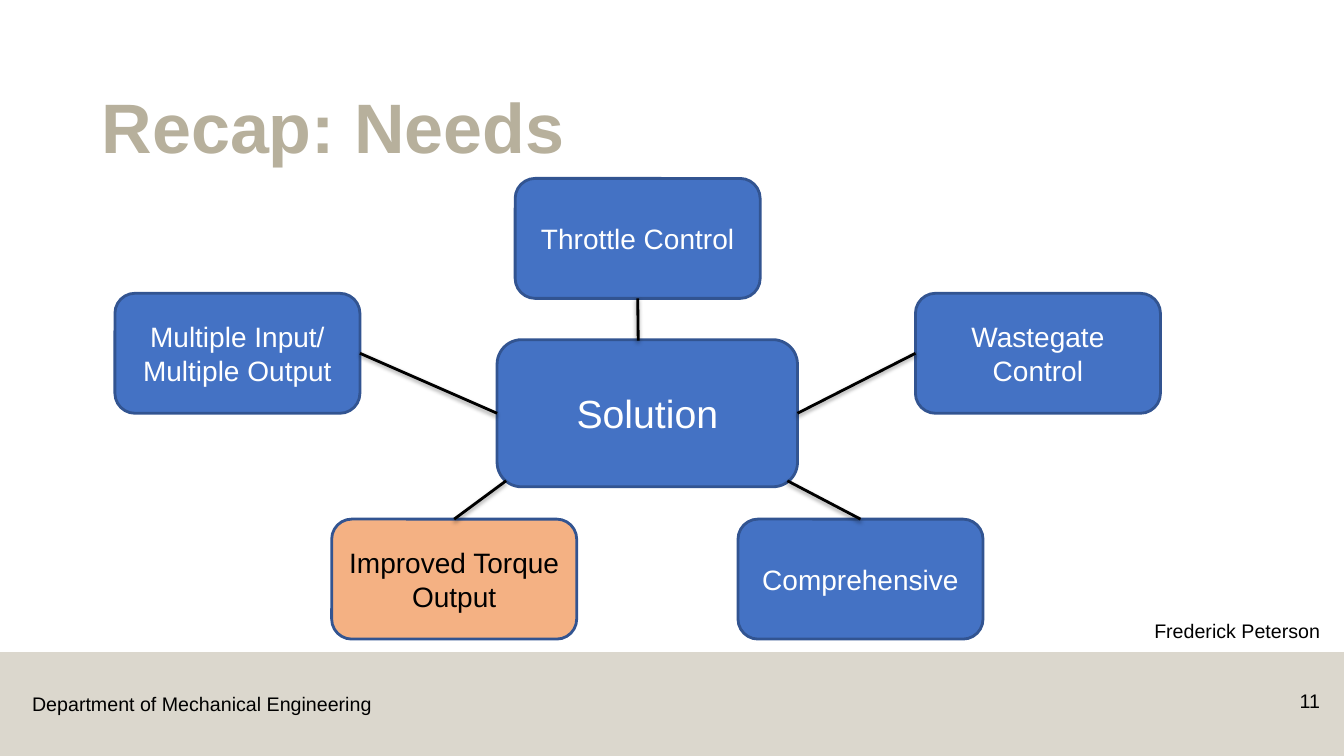
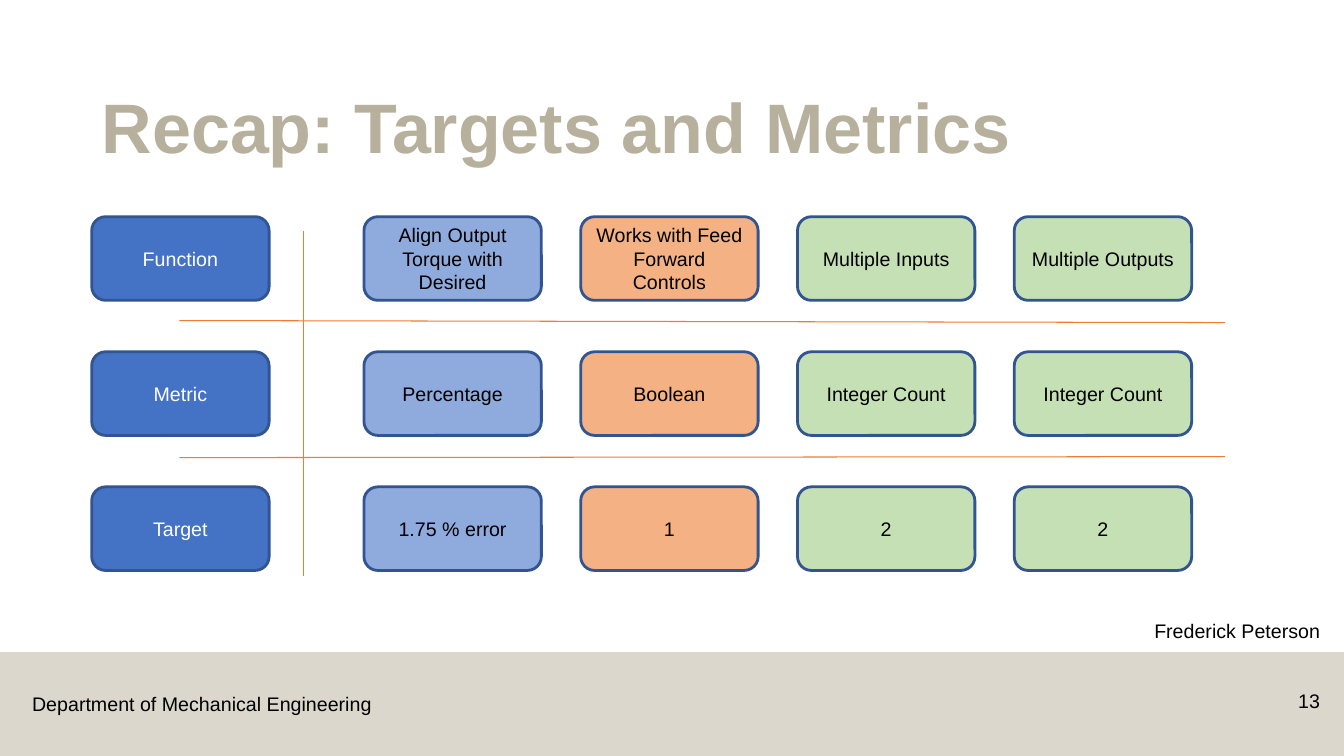
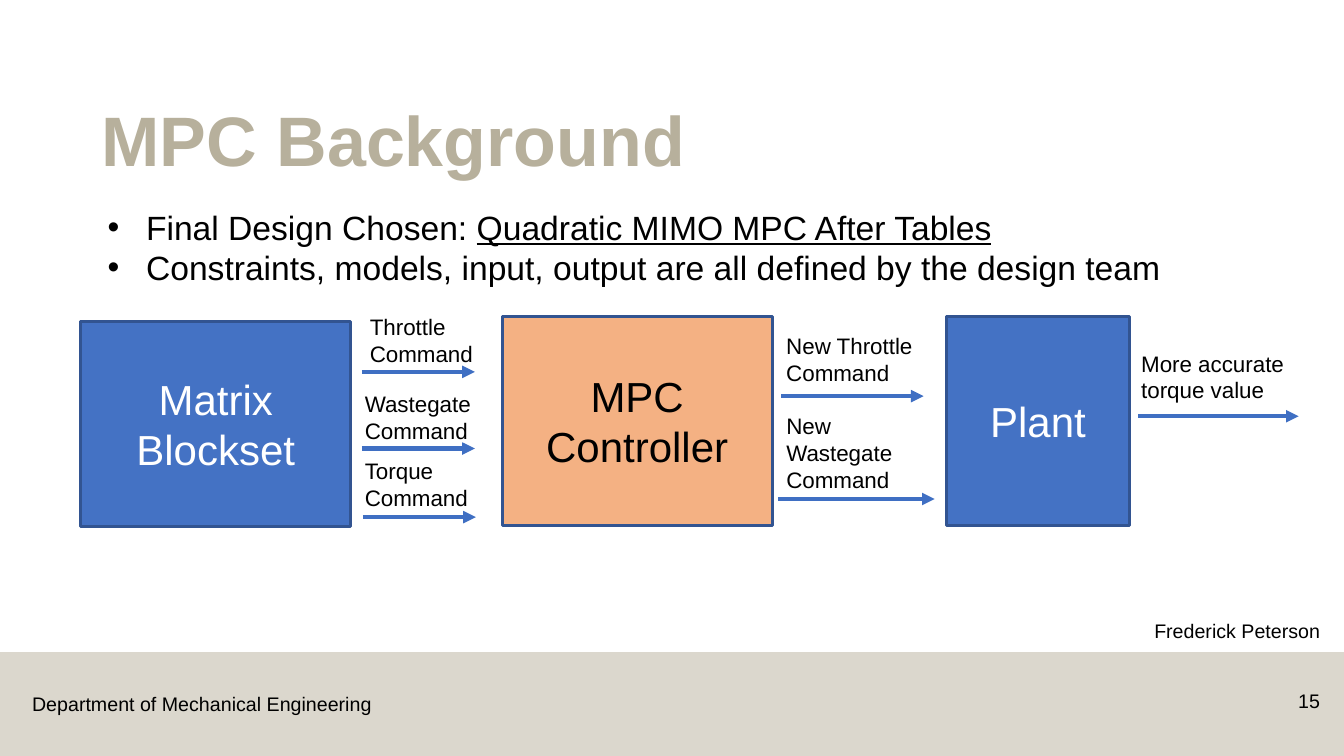
from lxml.etree import SubElement
from pptx import Presentation
from pptx.dml.color import RGBColor
from pptx.enum.shapes import MSO_CONNECTOR, MSO_SHAPE
from pptx.enum.text import MSO_ANCHOR, PP_ALIGN
from pptx.oxml.ns import qn
from pptx.util import Inches, Pt

FONT = "Arial"
BLACK, WHITE = "000000", "FFFFFF"
TAN, BAND = "B7B09C", "DBD7CD"
BLUE, EDGE, ARROW = "4472C4", "325491", "3F6FC3"
SKY, PEACH, GREEN = "8FAADC", "F4B183", "C5E0B4"
ORANGE = "ED7D31"
TOP, LEFT, BOTTOM, RIGHT = range(4)


def rgb(color):
    return RGBColor.from_string(color)


def style(frame, size, color, bold=False, align=PP_ALIGN.LEFT):
    for para in frame.paragraphs:
        para.alignment = align
        for run in para.runs:
            run.font.name = FONT
            run.font.size = Pt(size)
            run.font.bold = bold
            run.font.color.rgb = rgb(color)


def label(slide, text, at, size=14, color=BLACK, bold=False, align=PP_ALIGN.LEFT):
    frame = slide.shapes.add_textbox(*map(Inches, at)).text_frame
    frame.word_wrap = True
    frame.text = text
    style(frame, size, color, bold, align)
    return frame


def box(slide, text, at, fill=BLUE, size=14, kind=MSO_SHAPE.ROUNDED_RECTANGLE):
    shape = slide.shapes.add_shape(kind, *map(Inches, at))
    shape.shadow.inherit = False
    shape.fill.solid()
    shape.fill.fore_color.rgb = rgb(fill)
    shape.line.color.rgb = rgb(EDGE)
    shape.line.width = Pt(2)
    frame = shape.text_frame
    frame.word_wrap = True
    frame.vertical_anchor = MSO_ANCHOR.MIDDLE
    frame.text = text
    style(frame, size, WHITE if fill == BLUE else BLACK, align=PP_ALIGN.CENTER)
    return shape


def line(slide, start, end, color, width):
    """Draw a straight line and return it with its empty effect list."""
    wire = slide.shapes.add_connector(
        MSO_CONNECTOR.STRAIGHT, *map(Inches, (*start, *end)))
    wire.line.color.rgb = rgb(color)
    wire.line.width = Pt(width)
    effects = SubElement(wire._element.spPr, qn("a:effectLst"))
    return wire, effects


def spoke(slide, hub, side, node, end, point=(0, 0)):
    """Join a need to a side of the hub, or to a point on it if side is None."""
    wire, effects = line(slide, point, point, BLACK, 2)
    if side is not None:
        wire.begin_connect(hub, side)
    wire.end_connect(node, end)
    shadow = SubElement(effects, qn("a:outerShdw"), blurRad=str(Pt(3.1)),
                        dist=str(Pt(1.6)), dir="5400000", rotWithShape="0")
    tint = SubElement(shadow, qn("a:srgbClr"), val=BLACK)
    SubElement(tint, qn("a:alpha"), val="38000")


def arrow(slide, left, right, top):
    wire, _ = line(slide, (left, top), (right, top), ARROW, 3)
    SubElement(wire.line._get_or_add_ln(), qn("a:tailEnd"), type="triangle")


def bullet(para):
    props = para._p.get_or_add_pPr()
    props.set("marL", str(Inches(0.38)))
    props.set("indent", str(-Inches(0.38)))
    tint = SubElement(props, qn("a:buClr"))
    SubElement(tint, qn("a:srgbClr"), val=BLACK)
    SubElement(props, qn("a:buFont"), typeface=FONT)
    SubElement(props, qn("a:buChar"), char="•")


def page(deck, title, number, top=0.62):
    """Add a slide with the shared band, title and footer."""
    slide = deck.slides.add_slide(deck.slide_layouts[6])
    band = slide.shapes.add_shape(
        MSO_SHAPE.RECTANGLE, *map(Inches, (0, 6.47, 13.33, 1.03)))
    band.shadow.inherit = False
    band.fill.solid()
    band.fill.fore_color.rgb = rgb(BAND)
    band.line.fill.background()
    label(slide, "Department of Mechanical Engineering", (0.22, 6.82, 3.7, 0.34))
    head = label(slide, title, (0.91, top, 11.5, 1.1), 50, TAN, True)
    head.vertical_anchor = MSO_ANCHOR.BOTTOM
    head.paragraphs[0].line_spacing = 0.9
    label(slide, str(number), (12.42, 6.79, 0.77, 0.4), align=PP_ALIGN.RIGHT)
    label(slide, "Frederick Peterson", (11.35, 6.09, 2, 0.34))
    return slide


def needs(deck):
    slide = page(deck, "Recap: Needs", 11)

    def need(text, left, top, fill=BLUE):
        return box(slide, text, (left, top, 2.43, 1.19), fill, 20)

    multi = need("Multiple Input/\nMultiple Output", 1.14, 2.91)
    throttle = need("Throttle Control", 5.11, 1.77)
    torque = need("Improved Torque\nOutput", 3.29, 5.15, PEACH)
    waste = need("Wastegate Control", 9.08, 2.91)
    whole = need("Comprehensive", 7.32, 5.15)
    hub = box(slide, "Solution", (4.93, 3.37, 2.98, 1.46), size=28)
    spoke(slide, hub, RIGHT, waste, LEFT)
    spoke(slide, hub, LEFT, multi, RIGHT)
    spoke(slide, hub, None, throttle, BOTTOM, (6.33, 3.38))
    spoke(slide, hub, None, torque, TOP, (5.02, 4.77))
    spoke(slide, hub, None, whole, TOP, (7.81, 4.77))


def targets(deck):
    slide = page(deck, "Recap: Targets and Metrics", 13)
    for start, end in (
        ((1.78, 3.18), (12.15, 3.2)),
        ((1.78, 4.54), (12.15, 4.53)),
        ((3.01, 2.29), (3.01, 5.71)),
    ):
        line(slide, start, end, ORANGE, 0.75)
    fills = (BLUE, SKY, PEACH, GREEN, GREEN)
    lefts = [0.91] + [3.61 + 2.15 * col for col in range(4)]
    rows = (
        ("Function", "Align Output Torque with Desired",
         "Works with Feed Forward Controls", "Multiple Inputs", "Multiple Outputs"),
        ("Metric", "Percentage", "Boolean", "Integer Count", "Integer Count"),
        ("Target", "1.75 % error", "1", "2", "2"),
    )
    for row, texts in enumerate(rows):
        for text, left, fill in zip(texts, lefts, fills):
            box(slide, text, (left, 2.15 + 1.34 * row, 1.76, 0.83), fill)


def control(deck):
    slide = page(deck, "MPC Background", 15, 0.75)
    frame = label(slide, "Final Design Chosen: \nConstraints, models, input, output "
                  "are all defined by the design team", (0.97, 2, 11.19, 1))
    choice = frame.paragraphs[0].add_run()
    choice.text = "Quadratic MIMO MPC After Tables"
    choice.font.underline = True
    for para in frame.paragraphs:
        bullet(para)
    style(frame, 24, BLACK)

    for text, at, fill in (
        ("Matrix Blockset", (0.8, 3.19, 2.68, 2.03), BLUE),
        ("MPC Controller", (4.98, 3.14, 2.68, 2.07), PEACH),
        ("Plant", (9.39, 3.14, 1.81, 2.07), BLUE),
    ):
        box(slide, text, at, fill, 30, MSO_SHAPE.RECTANGLE)

    for text, at in (
        ("Throttle\nCommand", (3.57, 3.06, 1.54, 0.64)),
        ("Wastegate Command", (3.52, 3.82, 1.54, 0.64)),
        ("Torque Command", (3.52, 4.49, 1.28, 0.64)),
        ("New Throttle Command", (7.7, 3.25, 1.9, 0.64)),
        ("New Wastegate Command", (7.7, 4.04, 1.75, 0.91)),
        ("More accurate torque value", (11.22, 3.42, 1.67, 0.64)),
    ):
        label(slide, text, at, 16)

    for left, right, top in (
        (3.59, 4.71, 3.69), (3.59, 4.71, 4.45), (3.6, 4.72, 5.13),
        (7.75, 9.16, 3.93), (7.72, 9.27, 4.95), (11.29, 12.88, 4.13),
    ):
        arrow(slide, left, right, top)


def main():
    deck = Presentation()
    deck.slide_width = Inches(13.33)
    deck.slide_height = Inches(7.5)
    needs(deck)
    targets(deck)
    control(deck)
    deck.save("out.pptx")


if __name__ == "__main__":
    main()
